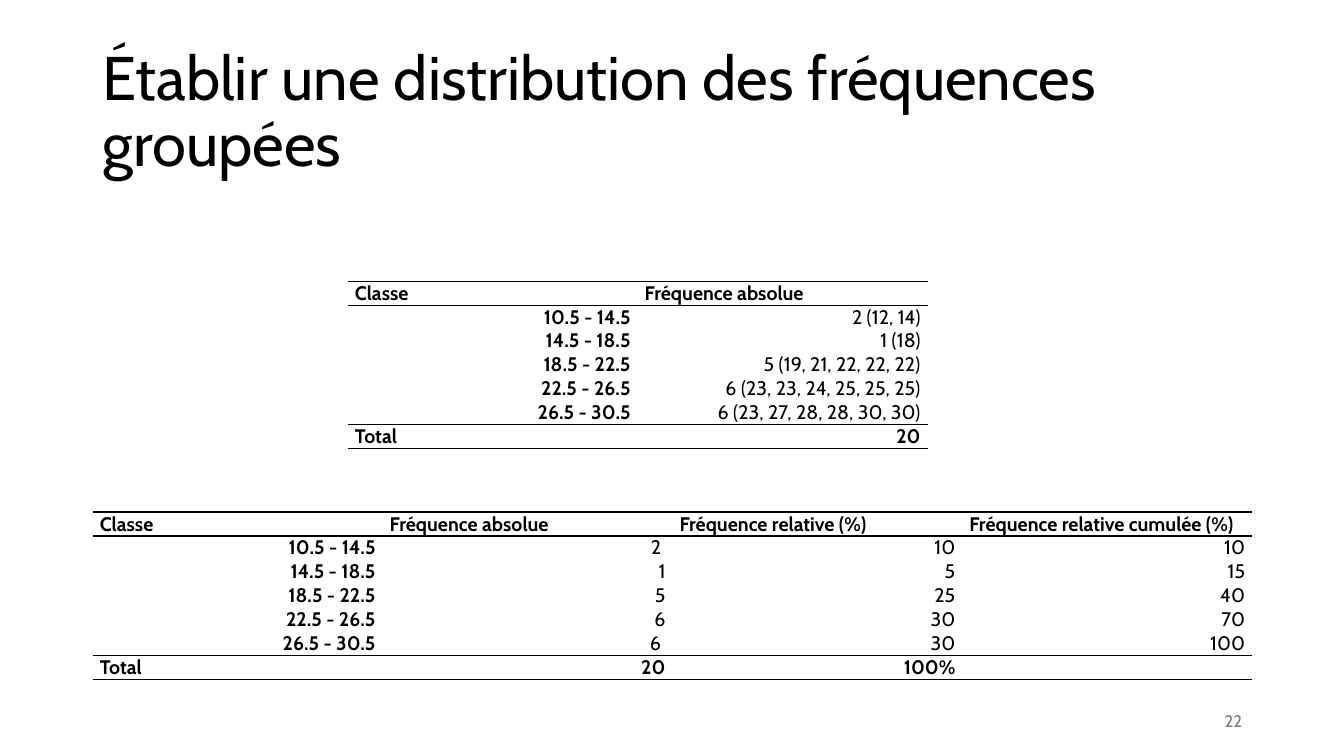
from lxml.etree import SubElement
from pptx import Presentation
from pptx.dml.color import RGBColor
from pptx.enum.text import MSO_ANCHOR, PP_ALIGN
from pptx.oxml import parse_xml
from pptx.oxml.ns import qn
from pptx.util import Inches, Pt

FONT = "Cabin"
BLACK, GREY = "000000", "797979"
MARGIN, CONTENT_WIDTH = 0.92, 11.5
COLUMN_WIDTH = CONTENT_WIDTH / 4
TABLE_HEIGHT = 1.66
NO_GRID_STYLE = "{2D5ABB26-0587-4C30-8999-92F81FD0307C}"
DRAWING_NS = "http://schemas.openxmlformats.org/drawingml/2006/main"

CLASSES = ["10.5 - 14.5", "14.5 - 18.5", "18.5 - 22.5", "22.5 - 26.5", "26.5 - 30.5"]
VALUES = ["2 (12, 14)", "1 (18)", "5 (19, 21, 22, 22, 22)",
          "6 (23, 23, 24, 25, 25, 25)", "6 (23, 27, 28, 28, 30, 30)"]
ABSOLUTE = ["2 ", "1", "5", "6", "6 "]
RELATIVE = ["10", "5", "25", "30", "30"]
CUMULATIVE = ["10", "15", "40", "70", "100"]

GROUPED_ROWS = [["Classe", "Fréquence absolue"], *zip(CLASSES, VALUES), ["Total", "20"]]
RELATIVE_ROWS = [
    ["Classe", "Fréquence absolue", "Fréquence relative (%)", "Fréquence relative cumulée (%)"],
    *zip(CLASSES, ABSOLUTE, RELATIVE, CUMULATIVE),
    ["Total", "20", "100%", ""],
]


def rgb(color):
    return RGBColor.from_string(color)


def style_paragraph(paragraph, size, color=BLACK, bold=False, align=PP_ALIGN.LEFT):
    paragraph.alignment = align
    font = paragraph.font
    font.name, font.size, font.bold = FONT, Pt(size), bold
    font.color.rgb = rgb(color)


def add_text(slide, box, text, size, color=BLACK, align=PP_ALIGN.LEFT, line_spacing=None):
    frame = slide.shapes.add_textbox(*map(Inches, box)).text_frame
    frame.word_wrap = True
    frame.vertical_anchor = MSO_ANCHOR.MIDDLE
    frame.text = text
    paragraph = frame.paragraphs[0]
    style_paragraph(paragraph, size, color, align=align)
    paragraph.line_spacing = line_spacing


def rule_cell(cell):
    """Draw a one-point line above and below the cell."""
    properties = cell._tc.get_or_add_tcPr()
    for index, side in enumerate(("lnT", "lnB")):
        properties.insert(index, parse_xml(
            f'<a:{side} xmlns:a="{DRAWING_NS}" w="{Pt(1)}"><a:solidFill>'
            f'<a:srgbClr val="{BLACK}"/></a:solidFill></a:{side}>'))


def fill_cell(cell, text, bold, align):
    cell.margin_left = cell.margin_right = Inches(0.07)
    cell.margin_top = cell.margin_bottom = 0
    cell.fill.background()
    cell.text = text
    paragraph = cell.text_frame.paragraphs[0]
    style_paragraph(paragraph, 14, bold=bold, align=align)
    if not text:
        SubElement(paragraph._p, qn("a:endParaRPr"), sz="1400")


def add_frequency_table(slide, left, top, rows):
    """Place a table ruled around its header and total rows."""
    columns, last = len(rows[0]), len(rows) - 1
    box = (left, top, columns * COLUMN_WIDTH, TABLE_HEIGHT)
    table = slide.shapes.add_table(len(rows), columns, *map(Inches, box)).table
    table.first_row = table.horz_banding = False
    table._tbl.tblPr.find(qn("a:tableStyleId")).text = NO_GRID_STYLE
    for row, texts in enumerate(rows):
        ruled = row in (0, last)
        for column, text in enumerate(texts):
            cell = table.cell(row, column)
            is_label = row == 0 or (row == last and column == 0)
            align = PP_ALIGN.LEFT if is_label else PP_ALIGN.RIGHT
            fill_cell(cell, text, ruled or column == 0, align)
            if ruled:
                rule_cell(cell)


def build_frequency_slide(presentation):
    slide = presentation.slides.add_slide(presentation.slide_layouts[6])
    add_text(slide, (MARGIN, 0.4, CONTENT_WIDTH, 1.45),
             "Établir une distribution des fréquences groupées", 44, line_spacing=0.9)
    add_frequency_table(slide, 3.45, 2.79, GROUPED_ROWS)
    add_frequency_table(slide, MARGIN, 5.08, RELATIVE_ROWS)
    add_text(slide, (9.42, 6.95, 3, 0.4), "22", 12, GREY, PP_ALIGN.RIGHT)


def main():
    presentation = Presentation()
    presentation.slide_width, presentation.slide_height = Inches(13.33), Inches(7.5)
    build_frequency_slide(presentation)
    presentation.save("out.pptx")


if __name__ == "__main__":
    main()
